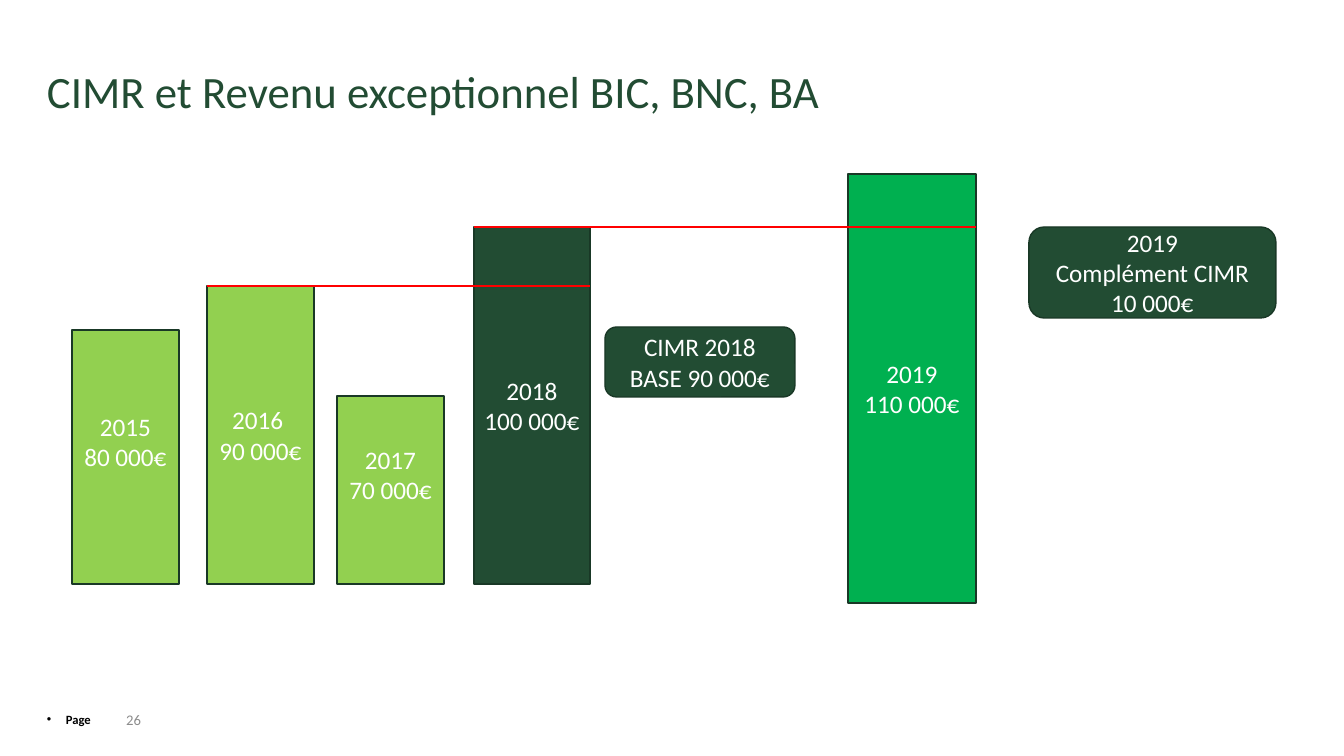
from lxml import etree
from pptx import Presentation
from pptx.dml.color import RGBColor
from pptx.enum.shapes import MSO_CONNECTOR, MSO_SHAPE
from pptx.enum.text import MSO_ANCHOR, PP_ALIGN
from pptx.oxml.ns import qn
from pptx.util import Pt

RECTANGLE = MSO_SHAPE.RECTANGLE
ROUNDED = MSO_SHAPE.ROUNDED_RECTANGLE
STRAIGHT = MSO_CONNECTOR.STRAIGHT
TOP, MIDDLE = MSO_ANCHOR.TOP, MSO_ANCHOR.MIDDLE
LEFT, CENTER, RIGHT = PP_ALIGN.LEFT, PP_ALIGN.CENTER, PP_ALIGN.RIGHT

COLORS = {
    "dark": "224C33",
    "light": "92D050",
    "bright": "00B050",
    "outline": "193826",
    "level": "FF0000",
    "white": "FFFFFF",
    "black": "000000",
    "gray": "8C8C8C",
}
LABEL = {"size": Pt(18), "name": "Calibri", "bold": False}
BASELINE = 584
RAISED = 36

BARS = {
    "2015": (["2015", "80 000€"], (72, 330, 107, BASELINE - 330), "light", RAISED),
    "2016": (["2016 ", "90 000€"], (207, 286, 107, BASELINE - 286), "light", 5),
    "2017": (["2017", "70 000€"], (337, 396, 107, BASELINE - 396), "light", RAISED),
    "2018": (["2018", "100 000€"], (474, 227, 116, BASELINE - 227), "dark", 5),
    "2019": (["2019", "110 000€"], (848, 174, 128, 429), "bright", 5),
}
CALLOUTS = [
    (["CIMR 2018", "BASE 90 000€"], (605, 327, 190, 70)),
    (["2019", "Complément CIMR", "10 000€"], (1029, 227, 247, 91)),
]
LEVELS = [("2016", "2018"), ("2018", "2019")]


def px(length):
    return round(length * 914400 / 100.8)


def rgb(name):
    return RGBColor.from_string(COLORS[name])


def set_format(target, values):
    for name, value in values.items():
        setattr(target, name, value)


def write_lines(shape, lines, color, font, align, anchor, right=10, bottom=5):
    frame = shape.text_frame
    set_format(frame, {
        "word_wrap": True, "vertical_anchor": anchor,
        "margin_left": px(10), "margin_right": px(right),
        "margin_top": px(5), "margin_bottom": px(bottom),
    })
    for index, line in enumerate(lines):
        para = frame.paragraphs[0] if index == 0 else frame.add_paragraph()
        para.alignment = align
        span = para.add_run()
        span.text = line
        set_format(span.font, font)
        span.font.color.rgb = rgb(color)
    return frame.paragraphs[0]


def add_title(slide, box):
    title = slide.shapes.title
    set_format(title, dict(zip(("left", "top", "width", "height"), map(px, box))))
    para = write_lines(title, ["CIMR et Revenu exceptionnel BIC, BNC, BA"], "dark",
                       {**LABEL, "size": Pt(32)}, LEFT, MIDDLE)
    para.line_spacing = 0.9


def add_block(slide, kind, lines, box, fill, bottom=5):
    block = slide.shapes.add_shape(kind, *map(px, box))
    block.shadow.inherit = False
    block.fill.solid()
    block.fill.fore_color.rgb = rgb(fill)
    block.line.color.rgb = rgb("outline")
    block.line.width = Pt(1)
    write_lines(block, lines, "white", LABEL, CENTER, MIDDLE, bottom=bottom)


def add_level(slide, start_box, end_box):
    left, top = start_box[:2]
    right = end_box[0] + end_box[2]
    level = slide.shapes.add_connector(STRAIGHT, px(left), px(top), px(right), px(top))
    level.line.color.rgb = rgb("level")
    level.line.width = Pt(1.5)
    etree.SubElement(level.element.spPr, qn("a:effectLst"))


def add_chart_region(slide):
    for lines, box, fill, bottom in BARS.values():
        add_block(slide, RECTANGLE, lines, box, fill, bottom)
    for lines, box in CALLOUTS:
        add_block(slide, ROUNDED, lines, box, "dark")
    for start, end in LEVELS:
        add_level(slide, BARS[start][1], BARS[end][1])


def add_footer(slide, box):
    left, top, width, height = box
    label = slide.shapes.add_textbox(px(left), px(top), px(64), px(height))
    para = write_lines(label, ["Page"], "black",
                       {**LABEL, "size": Pt(9), "bold": True}, LEFT, TOP, right=0)
    properties = para._p.get_or_add_pPr()
    properties.set("marL", str(px(19)))
    properties.set("indent", str(-px(19)))
    etree.SubElement(properties, qn("a:buFont"), typeface="Arial")
    etree.SubElement(properties, qn("a:buChar"), char="•")
    number = slide.shapes.add_textbox(px(left + width - 59), px(top), px(59), px(height))
    write_lines(number, ["26"], "gray", {**LABEL, "size": Pt(10.5)}, RIGHT, MIDDLE)


def main():
    deck = Presentation()
    set_format(deck, {"slide_width": px(1344), "slide_height": px(756)})
    slide = deck.slides.add_slide(deck.slide_layouts[5])
    add_footer(slide, (37, 707, 114, 25))
    add_title(slide, (37, 21, 899, 146))
    add_chart_region(slide)
    deck.save("out.pptx")


if __name__ == "__main__":
    main()
